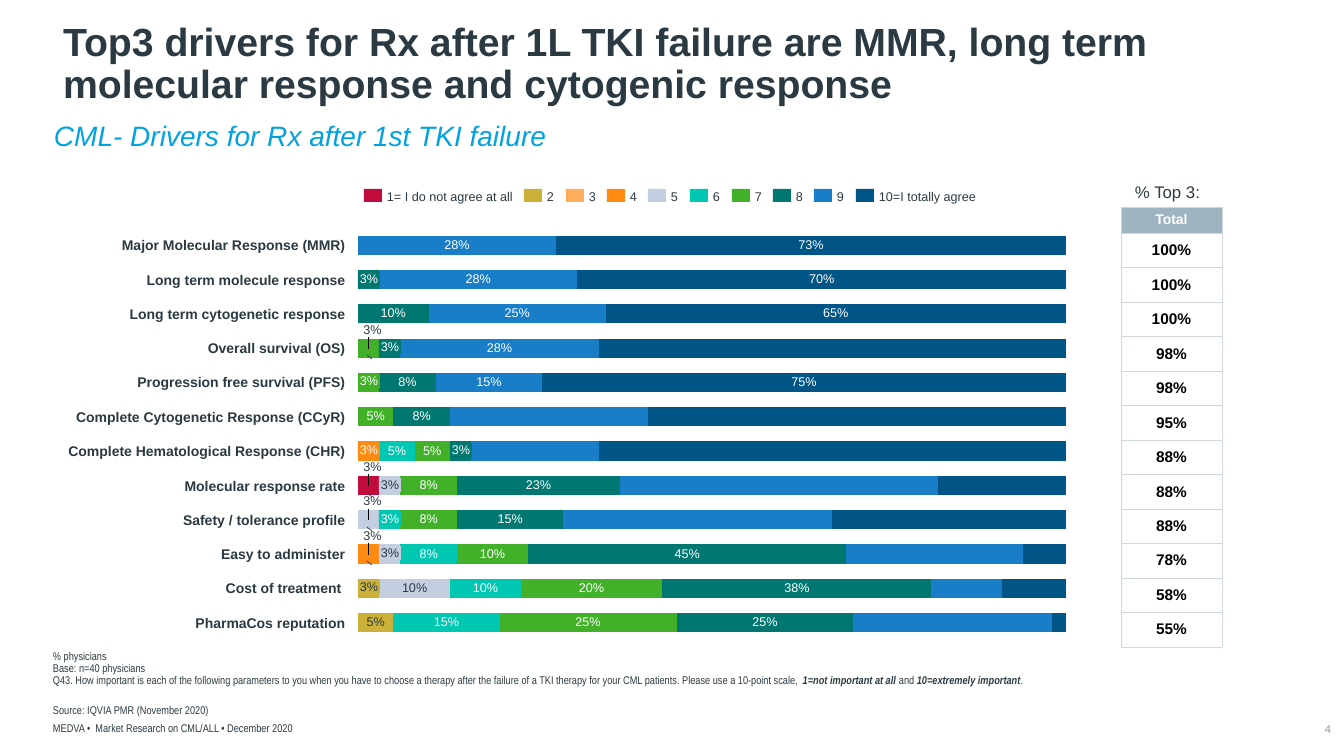
from dataclasses import dataclass, replace

from lxml import etree
from pptx import Presentation
from pptx.chart.data import CategoryChartData
from pptx.dml.color import RGBColor
from pptx.enum.chart import XL_CHART_TYPE, XL_LABEL_POSITION, XL_TICK_LABEL_POSITION, XL_TICK_MARK
from pptx.enum.shapes import MSO_CONNECTOR, MSO_SHAPE
from pptx.enum.text import MSO_ANCHOR, MSO_AUTO_SIZE, PP_ALIGN
from pptx.oxml import parse_xml
from pptx.oxml.ns import nsdecls, qn
from pptx.util import Pt

LEFT, CENTER, RIGHT = PP_ALIGN.LEFT, PP_ALIGN.CENTER, PP_ALIGN.RIGHT
TOP, MIDDLE, BOTTOM = MSO_ANCHOR.TOP, MSO_ANCHOR.MIDDLE, MSO_ANCHOR.BOTTOM
RECTANGLE, STRAIGHT = MSO_SHAPE.RECTANGLE, MSO_CONNECTOR.STRAIGHT
BAR_STACKED, LABEL_CENTER = XL_CHART_TYPE.BAR_STACKED, XL_LABEL_POSITION.CENTER
NO_LABELS, NO_TICKS = XL_TICK_LABEL_POSITION.NONE, XL_TICK_MARK.NONE
NO_AUTOFIT = MSO_AUTO_SIZE.NONE

EMU_PER_PX = 914400 / 100.8
DARK, WHITE, BORDER = "2B3A42", "FFFFFF", "CED9DF"
SCORE_COLOURS = {1: "C30C3E", 2: "CBB139", 3: "FEAD5C", 4: "FE8A12", 5: "C3CFE1",
                 6: "00C7B1", 7: "43B02A", 8: "007770", 9: "197DC8", 10: "005587"}
SCORE_NAMES = {1: "1= I do not agree at all", 10: "10=I totally agree"}
PALE_SCORES = (2, 5)
SMALL = 3  # share too narrow for a label inside the bar

CHART_LEFT, CHART_TOP, CHART_WIDTH, CHART_HEIGHT = 350, 219, 726, 430
PLOT_LEFT, PLOT_TOP, PLOT_WIDTH, PLOT_HEIGHT = 358, 228, 708, 412


@dataclass(frozen=True)
class Style:
    size: float
    colour: str = DARK
    bold: bool = False
    italic: bool = False
    font: str = "Arial"
    align: PP_ALIGN = LEFT
    line_spacing: float = 1.0


@dataclass(frozen=True)
class Driver:
    name: str
    top3: str
    shares: dict[int, int]  # score -> % of physicians
    unlabelled: int = 2     # trailing segments without a label

    def is_raised(self, index: int) -> bool:
        return index == 0 and list(self.shares.values())[:2] == [SMALL, SMALL]


DRIVERS = [
    Driver("Major Molecular Response (MMR)", "100%", {9: 28, 10: 73}, 0),
    Driver("Long term molecule response", "100%", {8: 3, 9: 28, 10: 70}, 0),
    Driver("Long term cytogenetic response", "100%", {8: 10, 9: 25, 10: 65}, 0),
    Driver("Overall survival (OS)", "98%", {7: 3, 8: 3, 9: 28, 10: 68}, 1),
    Driver("Progression free survival (PFS)", "98%", {7: 3, 8: 8, 9: 15, 10: 75}, 0),
    Driver("Complete Cytogenetic Response (CCyR)", "95%", {7: 5, 8: 8, 9: 28, 10: 60}),
    Driver("Complete Hematological Response (CHR)", "88%",
           {4: 3, 6: 5, 7: 5, 8: 3, 9: 18, 10: 68}),
    Driver("Molecular response rate", "88%", {1: 3, 5: 3, 7: 8, 8: 23, 9: 45, 10: 20}),
    Driver("Safety / tolerance profile", "88%", {5: 3, 6: 3, 7: 8, 8: 15, 9: 38, 10: 35}),
    Driver("Easy to administer", "78%", {4: 3, 5: 3, 6: 8, 7: 10, 8: 45, 9: 25, 10: 8}),
    Driver("Cost of treatment ", "58%", {2: 3, 5: 10, 6: 10, 7: 20, 8: 38, 9: 10, 10: 10}),
    Driver("PharmaCos reputation", "55%", {2: 5, 6: 15, 7: 25, 8: 25, 9: 28, 10: 3}),
]


def px(length: int) -> int:
    return round(length * EMU_PER_PX)


def rgb(colour: str) -> RGBColor:
    return RGBColor.from_string(colour)


def row_center(row: int) -> int:
    return PLOT_TOP + round(PLOT_HEIGHT * (row + 0.5) / len(DRIVERS))


def label_colour(score: int) -> str:
    return DARK if score in PALE_SCORES else WHITE


def format_font(font, style: Style) -> None:
    font.name, font.size = style.font, Pt(style.size)
    font.bold, font.italic = style.bold, style.italic
    font.color.rgb = rgb(style.colour)


def add_runs(paragraph, runs: list[tuple[str, Style]]) -> None:
    paragraph.alignment = runs[0][1].align
    paragraph.line_spacing = runs[0][1].line_spacing
    for text, style in runs:
        run = paragraph.add_run()
        run.text = text
        format_font(run.font, style)


def set_margins(target, margin: int) -> None:
    target.margin_left = target.margin_right = px(margin)
    target.margin_top = target.margin_bottom = px(margin)


def add_text(slide, box: tuple, paragraphs: list, anchor=MIDDLE) -> None:
    frame = slide.shapes.add_textbox(*map(px, box)).text_frame
    frame.word_wrap, frame.vertical_anchor = True, anchor
    set_margins(frame, 0)
    for index, runs in enumerate(paragraphs):
        add_runs(frame.add_paragraph() if index else frame.paragraphs[0], runs)


def add_rectangle(slide, box: tuple, colour: str):
    shape = slide.shapes.add_shape(RECTANGLE, *map(px, box))
    shape.shadow.inherit = False
    shape.fill.solid()
    shape.fill.fore_color.rgb = rgb(colour)
    shape.line.fill.background()
    return shape


def manual_layout(entries: dict[str, object]):
    body = "".join(f'<c:{name} val="{value}"/>' for name, value in entries.items())
    return parse_xml(f'<c:layout {nsdecls("c")}><c:manualLayout>{body}</c:manualLayout></c:layout>')


def add_chart(slide) -> None:
    data = CategoryChartData(number_format='0"%"')
    data.categories = [driver.name for driver in DRIVERS]
    values = [list(driver.shares.values()) for driver in DRIVERS]
    for index in range(max(map(len, values))):
        data.add_series(f"Series {index + 1}",
                        [row[index] if index < len(row) else None for row in values])
    box = map(px, (CHART_LEFT, CHART_TOP, CHART_WIDTH, CHART_HEIGHT))
    chart = slide.shapes.add_chart(BAR_STACKED, *box, data).chart
    chart.has_legend = chart.has_title = False
    format_font(chart.font, Style(10))
    plot = chart.plots[0]
    plot.gap_width, plot.overlap, plot.vary_by_categories = 80, 100, False
    axis = chart.category_axis
    axis.reverse_order, axis.tick_label_position = True, NO_LABELS
    axis.major_tick_mark = axis.minor_tick_mark = NO_TICKS
    axis.format.line.color.rgb = rgb(WHITE)
    scale = chart.value_axis
    scale.minimum_scale, scale.maximum_scale = 0, 100
    scale.has_major_gridlines = scale.visible = False

    # Fixed plot area, so that bars line up with the row labels
    area = chart._chartSpace.find(".//" + qn("c:plotArea"))
    for layout in area.findall(qn("c:layout")):
        area.remove(layout)
    area.insert(0, manual_layout({"layoutTarget": "inner", "xMode": "edge", "yMode": "edge",
                                  "x": (PLOT_LEFT - CHART_LEFT) / CHART_WIDTH,
                                  "y": (PLOT_TOP - CHART_TOP) / CHART_HEIGHT,
                                  "w": PLOT_WIDTH / CHART_WIDTH,
                                  "h": PLOT_HEIGHT / CHART_HEIGHT}))
    for index, series in enumerate(plot.series):
        format_series(series, index)


def format_series(series, index: int) -> None:
    labels = series.data_labels
    labels.show_value = False
    labels.number_format, labels.number_format_is_linked = '0"%"', False
    for row, driver in enumerate(DRIVERS):
        if index >= len(driver.shares):
            continue
        score, value = list(driver.shares.items())[index]
        point, raised = series.points[row], driver.is_raised(index)
        point.format.fill.solid()
        point.format.fill.fore_color.rgb = rgb(SCORE_COLOURS[score])
        hidden = index >= len(driver.shares) - driver.unlabelled
        if hidden or (value == SMALL and not raised):
            continue
        format_font(point.data_label.font, Style(9, DARK if raised else label_colour(score)))
        point.data_label.position = LABEL_CENTER
        if raised:
            number = series._element.xpath(f'.//c:dLbl/c:idx[@val="{row}"]')[0]
            number.addnext(manual_layout({"x": 4 / CHART_WIDTH, "y": -18 / CHART_HEIGHT}))
    if index == 0:
        labels._element.append(parse_xml(
            f'<c:extLst {nsdecls("c")}><c:ext uri="{{CE6537A1-D6FC-4f65-9D91-7224C49458BB}}" '
            'xmlns:c15="http://schemas.microsoft.com/office/drawing/2012/chart">'
            '<c15:showLeaderLines val="1"/></c:ext></c:extLst>'))


def add_small_labels(slide, row: int, driver: Driver) -> None:
    start, middle = 0, row_center(row)
    for index, (score, value) in enumerate(driver.shares.items()):
        if driver.is_raised(index):
            line = slide.shapes.add_connector(
                STRAIGHT, *map(px, (372, middle + 11, 367, middle + 7)))
            line.line.color.rgb, line.line.width = rgb(DARK), Pt(0.5)
            etree.SubElement(line._element.spPr, qn("a:effectLst"))
        elif value == SMALL and index < len(driver.shares) - driver.unlabelled:
            center = PLOT_LEFT + round(PLOT_WIDTH * (start + value / 2) / 100)
            chip = add_rectangle(slide, (center - 11, middle - 8, 22, 14), SCORE_COLOURS[score])
            frame = chip.text_frame
            frame.word_wrap, frame.vertical_anchor = False, MIDDLE
            set_margins(frame, 0)
            style = Style(9, label_colour(score), align=CENTER, line_spacing=0.9)
            add_runs(frame.paragraphs[0], [("3%", style)])
        start += value


def set_borders(cell, colours: dict[str, str]) -> None:
    properties = cell._tc.get_or_add_tcPr()
    for index, (side, colour) in enumerate(colours.items()):
        width = Pt(1 if colour == WHITE else 0.25)
        properties.insert(index, parse_xml(
            f'<a:ln{side} {nsdecls("a")} w="{width}"><a:solidFill>'
            f'<a:srgbClr val="{colour}"/></a:solidFill></a:ln{side}>'))


def add_top3_table(slide) -> None:
    texts = ["", "Total"] + [driver.top3 for driver in DRIVERS]
    heights = [px(28), px(26)] + [px(414) // len(DRIVERS)] * len(DRIVERS)
    box = map(px, (1121, 179, 101, 468))
    table = slide.shapes.add_table(len(texts), 1, *box).table
    table.first_row = table.horz_banding = False
    for row, (text, height) in enumerate(zip(texts, heights)):
        table.rows[row].height = height
        cell = table.cell(row, 0)
        cell.vertical_anchor = MIDDLE
        set_margins(cell, 1)
        cell.fill.background()
        paragraph = cell.text_frame.paragraphs[0]
        style = Style(11, "000000", bold=True, align=CENTER)
        if text == "Total":
            style = replace(style, size=10, colour=WHITE)
            cell.fill.solid()
            cell.fill.fore_color.rgb = rgb("9EB4C0")
        if text:
            add_runs(paragraph, [(text, style)])
        else:
            etree.SubElement(paragraph._p, qn("a:endParaRPr"), sz="1000")
        edge = BORDER if row else WHITE
        set_borders(cell, {"L": edge, "R": edge, "T": edge, "B": BORDER})


def main() -> None:
    presentation = Presentation()
    presentation.slide_width, presentation.slide_height = px(1344), px(756)
    slide = presentation.slides.add_slide(presentation.slide_layouts[5])

    # Title and subtitle
    title = slide.shapes.title
    title.left, title.top, title.width, title.height = map(px, (53, 25, 1240, 87))
    title.text_frame.auto_size, title.text_frame.vertical_anchor = NO_AUTOFIT, BOTTOM
    add_runs(title.text_frame.paragraphs[0], [
        ("Top3 drivers for Rx after 1L TKI failure are MMR, long term molecular response "
         "and cytogenic response", Style(28, bold=True, line_spacing=0.9))])
    add_text(slide, (54, 122, 1220, 30), [[("CML- Drivers for Rx after 1st TKI failure", Style(
        20, "00A3E0", italic=True, line_spacing=0.9))]], TOP)

    # Chart with row labels and small-share labels
    add_chart(slide)
    for row, driver in enumerate(DRIVERS):
        add_text(slide, (52, row_center(row) - 9, 293, 17),
                 [[(driver.name, Style(10, bold=True, align=RIGHT))]])
        add_small_labels(slide, row, driver)

    # Legend
    for score, colour in SCORE_COLOURS.items():
        left = 364 if score == 1 else 524 + round(41.5 * (score - 2))
        add_rectangle(slide, (left, 189, 18, 13), colour)
        width = 130 if score in SCORE_NAMES else 15
        add_text(slide, (left + 23, 189, width, 15),
                 [[(SCORE_NAMES.get(score, str(score)), Style(9))]])

    # Top 3 table
    add_top3_table(slide)
    add_text(slide, (1117, 184, 101, 18),
             [[("% Top 3:", Style(12, align=CENTER, line_spacing=0.9))]], TOP)

    # Footnotes, source and page number
    note = Style(8, font="Arial Narrow", line_spacing=0.9)
    strong = replace(note, bold=True, italic=True)
    add_text(slide, (53, 651, 1240, 36), [
        [("% physicians", note)],
        [("Base: n=40 physicians", note)],
        [("Q43. How important is each of the following parameters to you when you have to choose "
          "a therapy after the failure of a TKI therapy for your CML patients. "
          "Please use a 10-point scale, ", note),
         ("1=not important at all", strong), (" and ", note),
         ("10=extremely important", strong), (".", note)]], BOTTOM)
    add_text(slide, (53, 705, 995, 12), [[("Source: IQVIA PMR (November 2020)", note)]], BOTTOM)
    add_text(slide, (53, 723, 995, 12),
             [[("MEDVA •  Market Research on CML/ALL • December 2020", note)]], BOTTOM)
    add_text(slide, (1292, 723, 39, 13), [[("4", Style(8, "959CA0", align=RIGHT))]])

    presentation.save("out.pptx")


if __name__ == "__main__":
    main()
